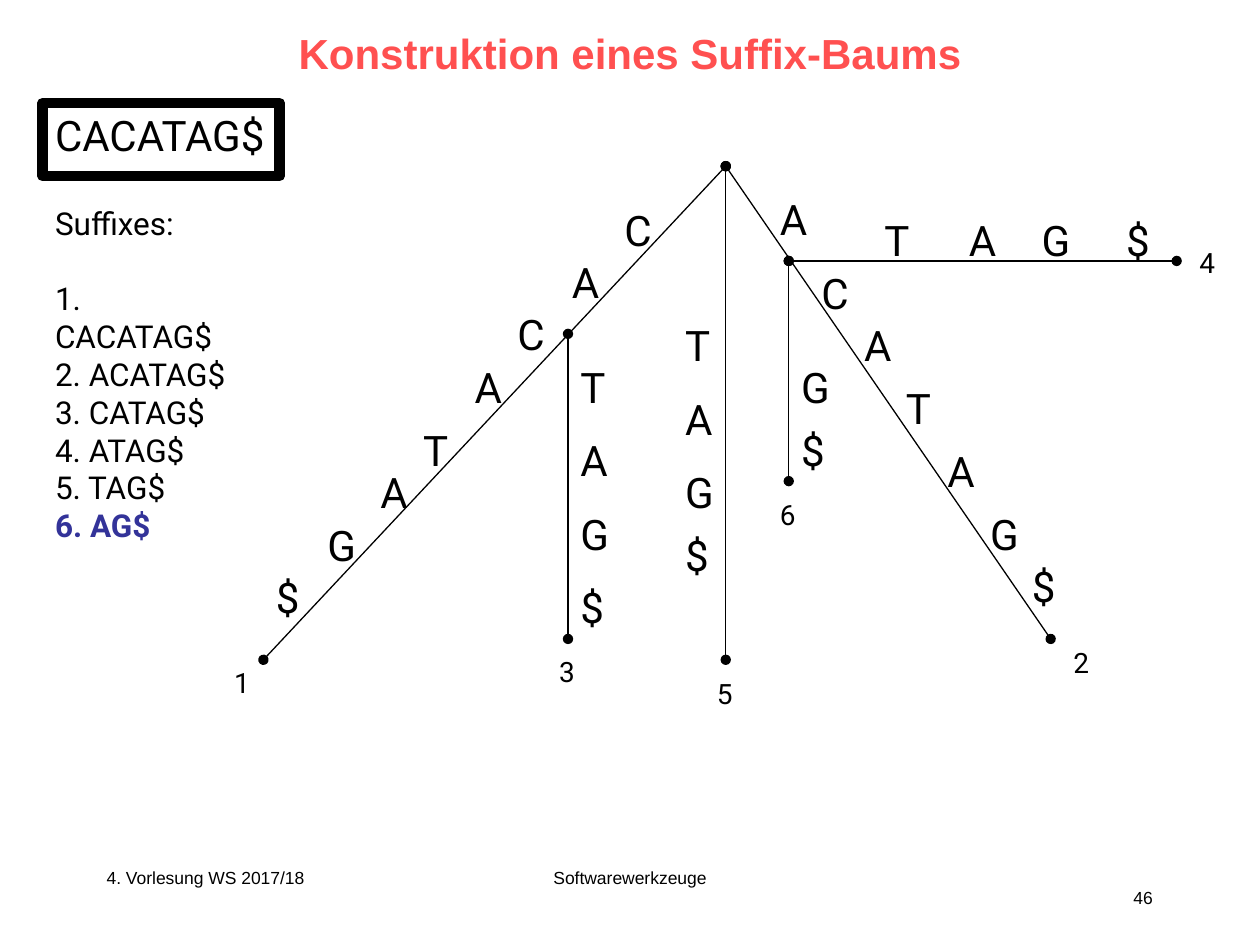
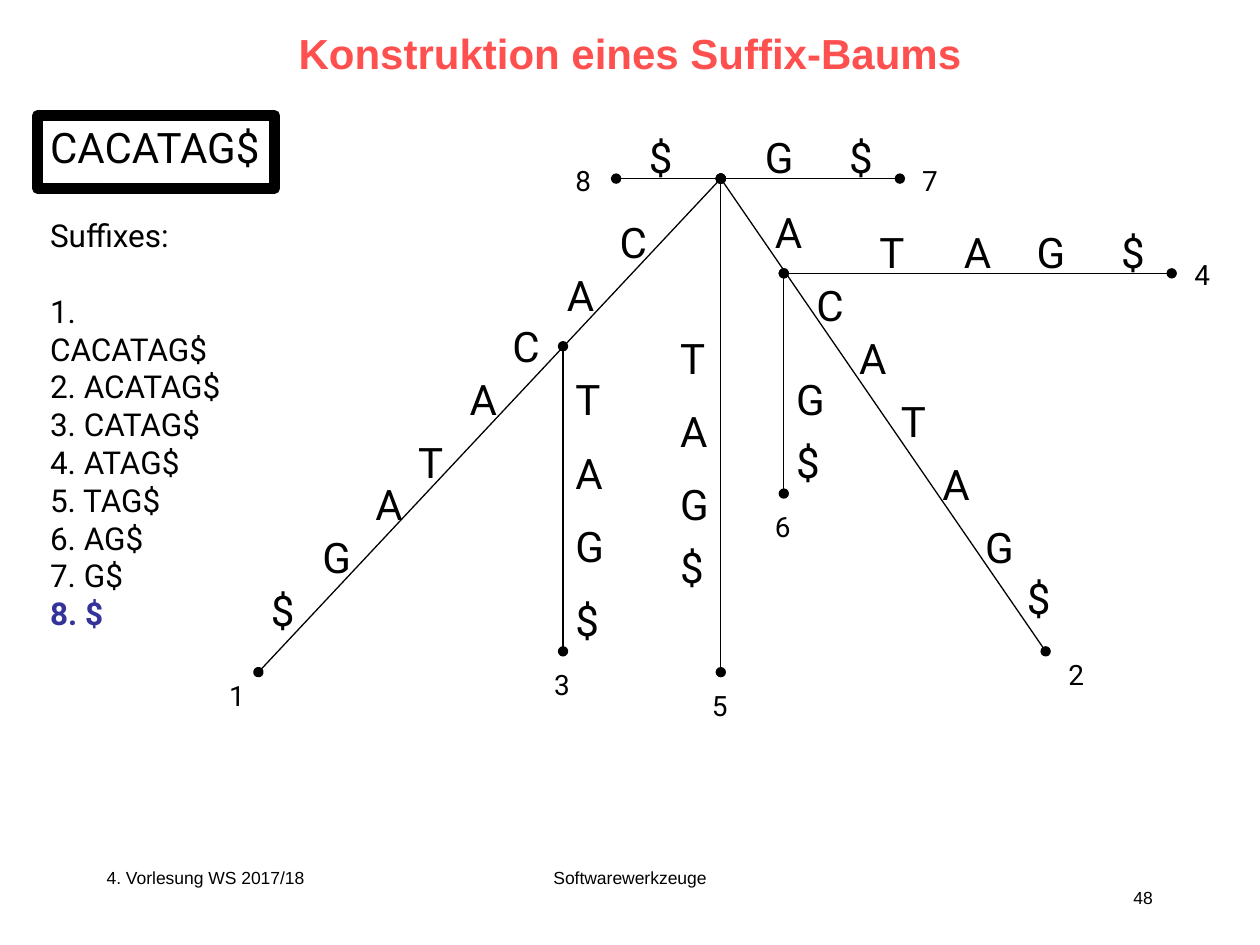
import dataclasses

import pptx
import pptx.dml.color
import pptx.enum.shapes
import pptx.enum.text
import pptx.oxml.ns
import pptx.slide
import pptx.text.text
import pptx.util
from lxml import etree

Cm = pptx.util.Cm
Pt = pptx.util.Pt
RGB = pptx.dml.color.RGBColor
ALIGN = pptx.enum.text.PP_ALIGN
ANCHOR = pptx.enum.text.MSO_ANCHOR
Point = tuple[float, float]


@dataclasses.dataclass(frozen=True)
class Theme:
    ink: RGB = RGB(0x00, 0x00, 0x00)
    title: RGB = RGB(0xFF, 0x50, 0x50)
    current: RGB = RGB(0x33, 0x33, 0x99)
    head_font: str = "Arial"
    body_font: str = "Roboto"
    large: float = 24
    list_size: float = 18
    leaf_size: float = 16
    footer_size: float = 10
    edge_width: float = 0.75
    frame_width: float = 6


@dataclasses.dataclass(frozen=True)
class Branch:
    """An edge path to one leaf; all points in cm from the root."""
    start: Point
    end: Point
    letters: str
    spots: list[Point]
    leaf: Point


@dataclasses.dataclass(frozen=True)
class Step:
    """A slide that shows the tree after the first suffixes are inserted."""
    suffixes: int
    root: Point
    page: int


@dataclasses.dataclass(frozen=True)
class Footer:
    text: str
    left: float
    top: float
    width: float
    align: ALIGN


THEME = Theme()
TITLE = "Konstruktion eines Suffix-Baums"
WORD = "CACATAG$"
LETTER_WIDTHS = {"G": 1.07, "$": 0.97}
ROOT: Point = (0, 0)
NODE_CA: Point = (-3.18, 3.38)
NODE_A: Point = (1.27, 1.91)

# Branch k belongs to suffix k
BRANCHES = [
    Branch(ROOT, (-9.32, 9.95), WORD,
           [(-2.29, 0.64), (-3.35, 1.7), (-4.45, 2.74), (-5.31, 3.81),
            (-6.35, 5.08), (-7.21, 5.92), (-8.28, 6.99), (-9.32, 8.05)],
           (-10.16, 9.95)),
    Branch(ROOT, (6.55, 9.53), WORD[1:],
           [(0.84, 0.43), (1.68, 1.91), (2.54, 2.97), (3.38, 4.24),
            (4.22, 5.51), (5.08, 6.78), (5.92, 7.82)],
           (6.76, 9.53)),
    Branch(NODE_CA, (-3.18, 9.53), WORD[4:],
           [(-3.18, 3.81 + 1.48 * i) for i in range(4)], (-3.61, 9.73)),
    Branch(NODE_A, (9.09, 1.91), WORD[4:],
           [(x, 0.84) for x in (2.95, 4.65, 6.12, 7.82)], (9.3, 1.47)),
    Branch(ROOT, (0, 9.95), WORD[4:],
           [(-1.07, y) for y in (2.97, 4.45, 5.92, 7.19)], (-0.43, 10.16)),
    Branch(NODE_A, (1.27, 6.35), WORD[6:],
           [(1.27, y) for y in (3.81, 5.08)], (0.84, 6.55)),
    Branch(ROOT, (3.61, 0), WORD[6:],
           [(x, -1.07) for x in (0.64, 2.34)], (3.81, -0.43)),
    Branch(ROOT, (-2.11, 0), WORD[7:], [(-1.7, -1.07)], (-3.18, -0.43)),
]

STEPS = [Step(6, (14.63, 3.35), 46), Step(8, (14.53, 3.6), 48)]


def style(p: pptx.text.text._Paragraph, text: str, size: float,
          font: str = THEME.body_font, color: RGB = THEME.ink,
          bold: bool = False, align: ALIGN = ALIGN.LEFT) -> None:
    p.text = text
    p.alignment = align
    p.font.size = Pt(size)
    p.font.name = font
    p.font.color.rgb = color
    p.font.bold = bold


def add_text(slide: pptx.slide.Slide, at: Point, size: Point, text: str,
             points: float, **look) -> pptx.text.text.TextFrame:
    sp = slide.shapes.add_textbox(*map(Cm, at + size))
    tf = sp.text_frame
    tf.word_wrap = True
    style(tf.paragraphs[0], text, points, **look)
    return tf


def shift(origin: Point, offset: Point) -> Point:
    return origin[0] + offset[0], origin[1] + offset[1]


def add_edge(slide: pptx.slide.Slide, start: Point, end: Point) -> None:
    line = slide.shapes.add_connector(
        pptx.enum.shapes.MSO_CONNECTOR.STRAIGHT, *map(Cm, start + end))
    line.line.width = Pt(THEME.edge_width)
    line.line.color.rgb = THEME.ink
    qn = pptx.oxml.ns.qn
    for tag in ("a:headEnd", "a:tailEnd"):
        etree.SubElement(line.line._get_or_add_ln(), qn(tag), type="oval")
    etree.SubElement(line._element.spPr, qn("a:effectLst"))


def add_branch(slide: pptx.slide.Slide, root: Point, number: int,
               branch: Branch) -> None:
    add_edge(slide, shift(root, branch.start), shift(root, branch.end))
    for letter, spot in zip(branch.letters, branch.spots):
        add_text(slide, shift(root, spot),
                 (LETTER_WIDTHS.get(letter, 1.02), 1.27), letter, THEME.large)
    add_text(slide, shift(root, branch.leaf), (0.82, 0.94), str(number),
             THEME.leaf_size)


def add_word(slide: pptx.slide.Slide, root: Point) -> None:
    sp = slide.shapes.add_shape(
        pptx.enum.shapes.MSO_SHAPE.RECTANGLE,
        *map(Cm, shift(root, (-13.77, -1.27)) + (4.78, 1.47)))
    sp.shadow.inherit = False
    sp.fill.background()
    sp.line.color.rgb = THEME.ink
    sp.line.width = Pt(THEME.frame_width)
    tf = sp.text_frame
    tf.word_wrap = False
    tf.vertical_anchor = ANCHOR.TOP
    style(tf.paragraphs[0], WORD, THEME.large)


def add_suffix_list(slide: pptx.slide.Slide, step: Step) -> None:
    height = 2.48 + 0.76 * (step.suffixes - 1)
    tf = add_text(slide, shift(step.root, (-13.77, 0.64)), (4.2, height),
                  "Suffixes:", THEME.list_size)
    tf.paragraphs[0].space_after = Pt(21.5)
    for i in range(step.suffixes):
        last = i == step.suffixes - 1
        style(tf.add_paragraph(), f"{i + 1}. {WORD[i:]}", THEME.list_size,
              color=THEME.current if last else THEME.ink, bold=last)


def add_frame(slide: pptx.slide.Slide, page: int) -> None:
    # Title
    sp = slide.shapes.title
    sp.left, sp.top, sp.width, sp.height = map(Cm, (1.9, 0.43, 21.6, 1.27))
    tf = sp.text_frame
    tf.auto_size = pptx.enum.text.MSO_AUTO_SIZE.NONE
    tf.vertical_anchor = ANCHOR.MIDDLE
    style(tf.paragraphs[0], TITLE, THEME.large, font=THEME.head_font,
          color=THEME.title, bold=True, align=ALIGN.CENTER)
    # Footers
    for footer in (
        Footer("4. Vorlesung WS 2017/18", 1.9, 17.35, 5.29, ALIGN.LEFT),
        Footer("Softwarewerkzeuge", 8.68, 17.35, 8.04, ALIGN.CENTER),
        Footer(str(page), 18.2, 17.76, 5.29, ALIGN.RIGHT),
    ):
        add_text(slide, (footer.left, footer.top), (footer.width, 0.86),
                 footer.text, THEME.footer_size, font=THEME.head_font,
                 align=footer.align)


def main() -> None:
    prs = pptx.Presentation()
    prs.slide_width, prs.slide_height = Cm(25.4), Cm(19.05)
    for step in STEPS:
        slide = prs.slides.add_slide(prs.slide_layouts[5])
        add_frame(slide, step.page)
        for number, branch in enumerate(BRANCHES[:step.suffixes], 1):
            add_branch(slide, step.root, number, branch)
        add_word(slide, step.root)
        add_suffix_list(slide, step)
    prs.save("out.pptx")


if __name__ == "__main__":
    main()
